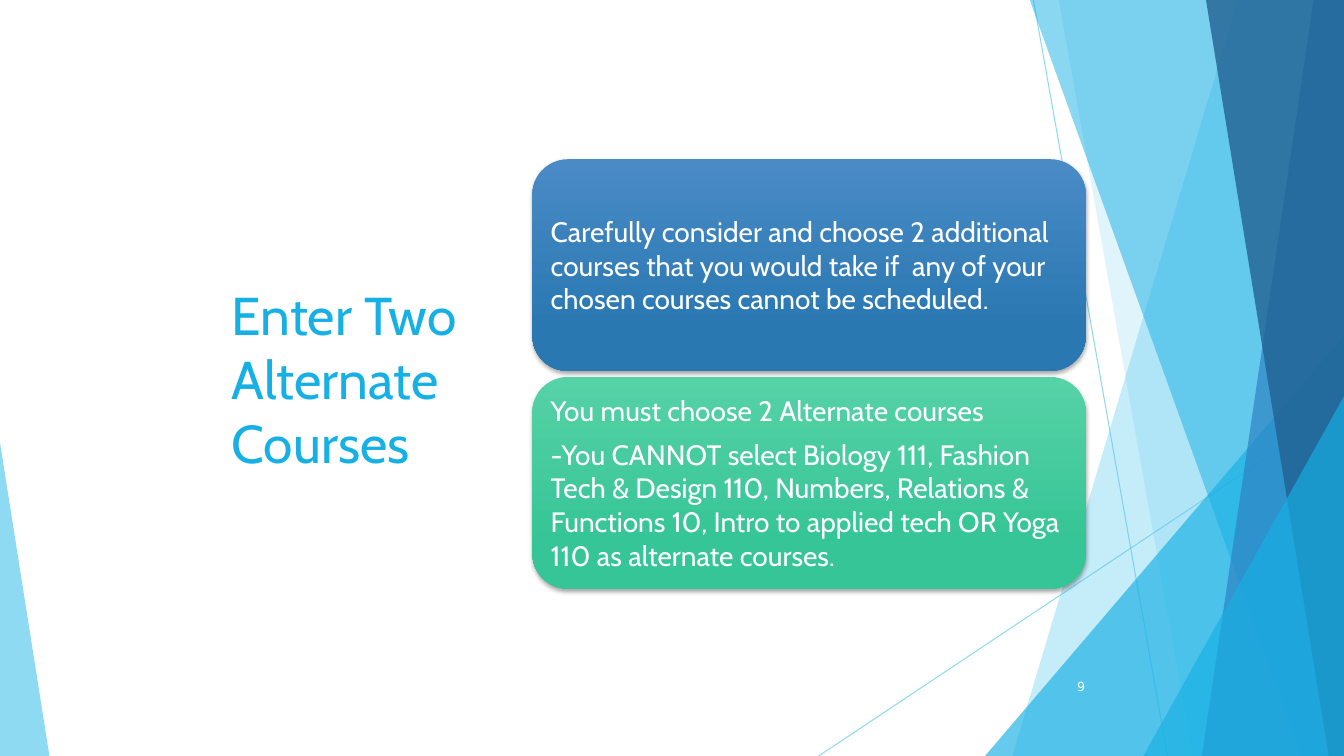
from dataclasses import dataclass
from typing import Any

from lxml.etree import SubElement as Sub
from pptx import Presentation
from pptx.dml.color import RGBColor
from pptx.enum.shapes import MSO_CONNECTOR as Link, MSO_SHAPE as Shape
from pptx.enum.text import MSO_ANCHOR as Anchor, PP_ALIGN as Align
from pptx.oxml.ns import qn
from pptx.util import Inches, Pt

SKY = RGBColor(0x5F, 0xCB, 0xEF)
CYAN = RGBColor(0x17, 0xB0, 0xE4)
BLUE = RGBColor(0x2E, 0x83, 0xC3)
NAVY = RGBColor(0x22, 0x62, 0x92)
WHITE = RGBColor(0xFF, 0xFF, 0xFF)
BLUE_TOP = RGBColor(0x4A, 0x8B, 0xC6)
BLUE_END = RGBColor(0x2A, 0x78, 0xB2)
GREEN_TOP = RGBColor(0x56, 0xD2, 0xA7)
GREEN_END = RGBColor(0x36, 0xC5, 0x96)

WIDE, HIGH, TOP = 13.33, 7.5, -0.01
FONT = "Cabin"


@dataclass
class Ray:
    start: tuple[float, float]
    end: tuple[float, float]


@dataclass
class Band:
    """Panel that reaches the right edge; its left side runs from top to foot."""
    top: float
    foot: float
    color: RGBColor
    alpha: int


@dataclass
class Wedge:
    """Triangle that stands on the bottom edge."""
    left: float
    top: float
    width: float
    tip: float
    color: RGBColor
    alpha: int


@dataclass
class Card:
    light: RGBColor
    dark: RGBColor
    lines: list[str]


RAYS = [Ray((10.25, 0), (11.58, HIGH)), Ray((WIDE, 4.03), (8.12, HIGH))]

# Back to front
PANELS = [
    Band(12.28, 10.04, SKY, 36),
    Band(10.5, 11.83, SKY, 20),
    Wedge(9.77, 3.33, 3.56, 1, CYAN, 66),
    Band(10.21, 12.91, CYAN, 50),
    Band(13.03, 11.92, BLUE, 70),
    Band(11.96, 13.18, NAVY, 80),
    Wedge(11.34, 3.93, 1.99, 1, CYAN, 66),
    Wedge(0, 4.39, 0.49, 0, SKY, 70),
]

CARDS = [
    Card(BLUE_TOP, BLUE_END, [
        "Carefully consider and choose 2 additional courses that you would "
        "take if  any of your chosen courses cannot be scheduled."]),
    Card(GREEN_TOP, GREEN_END, [
        "You must choose 2 Alternate courses",
        "-You CANNOT select Biology 111, Fashion Tech & Design 110, Numbers, "
        "Relations & Functions 10, Intro to applied tech OR Yoga 110 as "
        "alternate courses."]),
]


def style(item: Any, form: dict[str, Any]) -> None:
    for name, value in form.items():
        setattr(item, name, value)


def fade(item: Any, alpha: int) -> None:
    for tint in item._element.spPr.iter(qn("a:srgbClr")):
        Sub(tint, qn("a:alpha"), val=str(alpha * 1000))


def write(frame: Any, lines: list[str], size: float, color: RGBColor,
          font: str = FONT, align: Any = Align.LEFT, after: float = 0) -> None:
    style(frame, {"word_wrap": True, "vertical_anchor": Anchor.MIDDLE})
    for i, line in enumerate(lines):
        para = frame.add_paragraph() if i else frame.paragraphs[0]
        style(para, {"alignment": align, "space_after": Pt(after)})
        run = para.add_run()
        run.text = line
        style(run.font, {"name": font, "size": Pt(size)})
        run.font.color.rgb = color


def draw_ray(shapes: Any, ray: Ray) -> None:
    ends = [Inches(n) for n in ray.start + ray.end]
    line = shapes.add_connector(Link.STRAIGHT, *ends)
    line.line.color.rgb = SKY
    line.line.width = Pt(0.75)
    fade(line, 70)
    Sub(line._element.spPr, qn("a:effectLst"))


def draw_panel(shapes: Any, panel: Band | Wedge) -> None:
    if isinstance(panel, Band):
        spots = [(panel.top, TOP), (WIDE, TOP), (WIDE, HIGH), (panel.foot, HIGH)]
        first, *rest = [(Inches(x), Inches(y)) for x, y in spots]
        pen = shapes.build_freeform(*first)
        pen.add_line_segments(rest, close=True)
        item = pen.convert_to_shape()
    else:
        item = shapes.add_shape(
            Shape.ISOSCELES_TRIANGLE, Inches(panel.left), Inches(panel.top),
            Inches(panel.width), Inches(HIGH - panel.top))
        item.adjustments[0] = panel.tip
    item.fill.solid()
    item.fill.fore_color.rgb = panel.color
    fade(item, panel.alpha)
    item.line.fill.background()
    item.shadow.inherit = False


def draw_card(shapes: Any, card: Card, top: float) -> None:
    box = shapes.add_shape(Shape.ROUNDED_RECTANGLE, Inches(5.28), Inches(top),
                           Inches(5.49), Inches(2.1))
    box.fill.gradient()
    box.fill.gradient_angle = 270
    looks = [(0, card.light), (0.78, card.dark)]
    for stop, (place, color) in zip(box.fill.gradient_stops, looks):
        stop.position = place
        stop.color.rgb = color
    box.line.fill.background()

    # Soft shadow below the card
    box.shadow.inherit = False
    glow = Sub(box._element.spPr.find(qn("a:effectLst")), qn("a:outerShdw"),
               blurRad=str(Pt(3)), dist=str(Pt(2)), dir="5400000",
               algn="ctr", rotWithShape="0")
    tint = Sub(glow, qn("a:srgbClr"), val="000000")
    Sub(tint, qn("a:alpha"), val="35000")

    sides = ("left", "top", "right", "bottom")
    style(box.text_frame, {f"margin_{side}": Inches(0.08) for side in sides})
    write(box.text_frame, card.lines, 20, WHITE, after=7)


def main() -> None:
    deck = Presentation()
    style(deck, {"slide_width": Inches(WIDE), "slide_height": Inches(HIGH)})
    slide = deck.slides.add_slide(deck.slide_layouts[5])
    shapes = slide.shapes

    # Backdrop
    for ray in RAYS:
        draw_ray(shapes, ray)
    for panel in PANELS:
        draw_panel(shapes, panel)

    # Title
    title = shapes.title
    style(title, {"left": Inches(2.2), "top": Inches(1.51),
                  "width": Inches(2.91), "height": Inches(4.48)})
    write(title.text_frame, ["Enter Two Alternate Courses"], 38, CYAN)

    # Page number
    page = shapes.add_textbox(Inches(10.3), Inches(6.61), Inches(0.56), Inches(0.4))
    write(page.text_frame, ["9"], 9, WHITE, "DejaVu Sans", Align.RIGHT, 6)

    # Cards
    for i, card in enumerate(CARDS):
        draw_card(shapes, card, 1.58 + i * 2.16)

    deck.save("out.pptx")


if __name__ == "__main__":
    main()
